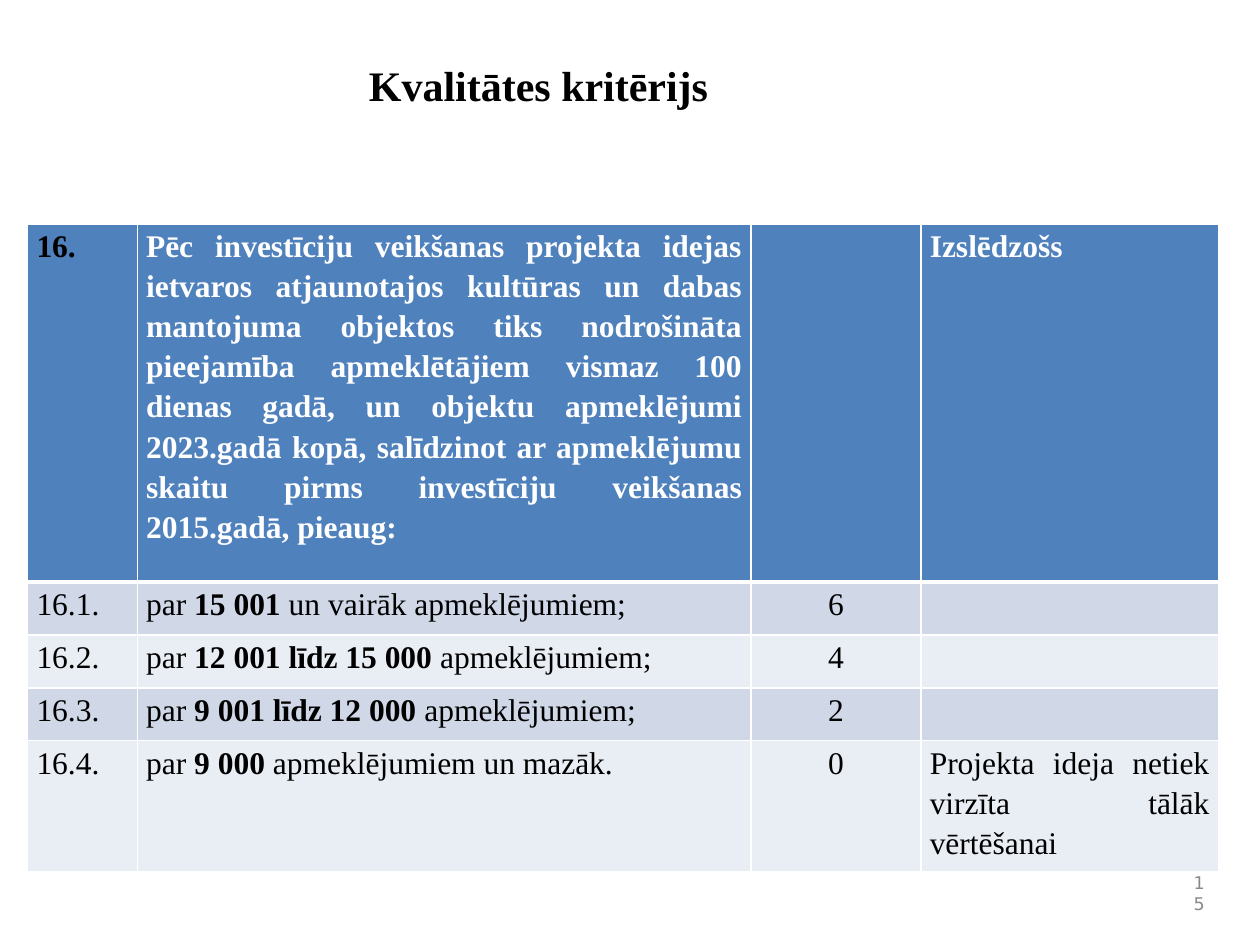
from lxml import etree
from pptx import Presentation
from pptx.dml.color import RGBColor
from pptx.enum.text import MSO_ANCHOR, PP_ALIGN as AL
from pptx.oxml.ns import qn
from pptx.util import Inches, Pt

SERIF, SANS = "Times New Roman", "DejaVu Sans"
BLACK, WHITE, GREY = "000000", "FFFFFF", "898989"
HEADER_FILL, BANDS = "4F81BD", ("D0D8E8", "E9EDF4")

TITLE = "Kvalitātes kritērijs"
PAGE = "15"
# Text between asterisks is bold.
ROWS = [
    ("*16.*",
     "*Pēc investīciju veikšanas projekta idejas ietvaros atjaunotajos kultūras "
     "un dabas mantojuma objektos tiks nodrošināta pieejamība apmeklētājiem "
     "vismaz 100 dienas gadā, un objektu apmeklējumi 2023.gadā kopā, salīdzinot "
     "ar apmeklējumu skaitu pirms investīciju veikšanas 2015.gadā, pieaug:*",
     "", "*Izslēdzošs*"),
    ("16.1.", "par *15 001 *un vairāk apmeklējumiem;", "6", ""),
    ("16.2.", "par *12 001 līdz 15 000 *apmeklējumiem;", "4", ""),
    ("16.3.", "par *9 001 līdz 12 000 *apmeklējumiem;", "2", ""),
    ("16.4.", "par *9 000 *apmeklējumiem un mazāk.", "0",
     "Projekta ideja netiek virzīta tālāk vērtēšanai"),
]
COL_WIDTHS = (0.87, 4.87, 1.35, 2.36)
ROW_HEIGHTS = (2.84, 0.42, 0.42, 0.42, 1.04)
BODY_ALIGN = (AL.JUSTIFY, AL.LEFT, AL.CENTER, AL.JUSTIFY)


def rgb(color):
    return RGBColor.from_string(color)


def style(font, size, name, color, bold=False):
    font.size, font.name, font.bold = Pt(size), name, bold
    font.color.rgb = rgb(color)


def add_text(slide, box, text, align, anchor, *font):
    tf = slide.shapes.add_textbox(*map(Inches, box)).text_frame
    tf.word_wrap = True
    tf.vertical_anchor = anchor
    tf.text = text
    p = tf.paragraphs[0]
    p.alignment = align
    style(p.runs[0].font, *font)


def set_borders(cell, widths):
    """Draw white borders; widths are points for left, right, top, bottom."""
    tc_pr = cell._tc.get_or_add_tcPr()
    for i, (side, width) in enumerate(zip("LRTB", widths)):
        ln = etree.Element(qn(f"a:ln{side}"), w=str(Pt(width)))
        fill = etree.SubElement(ln, qn("a:solidFill"))
        etree.SubElement(fill, qn("a:srgbClr"), val=WHITE)
        tc_pr.insert(i, ln)


def fill_cell(cell, text, row, col):
    header = row == 0
    cell.fill.solid()
    cell.fill.fore_color.rgb = rgb(HEADER_FILL if header else BANDS[(row - 1) % 2])
    set_borders(cell, (1, 1, 3 if row == 1 else 1, 3 if header else 1))
    if not text:
        return
    cell.margin_left = cell.margin_right = Inches(0.07)
    cell.margin_top = cell.margin_bottom = 0
    p = cell.text_frame.paragraphs[0]
    p.alignment = AL.JUSTIFY if header else BODY_ALIGN[col]
    p.line_spacing = 1.15
    color = WHITE if header and col else BLACK
    for i, part in enumerate(text.split("*")):
        if part:
            r = p.add_run()
            r.text = part
            style(r.font, 18, SERIF, color, i % 2 == 1)


def add_criteria_table(slide, left, top):
    size = (left, top, sum(COL_WIDTHS), sum(ROW_HEIGHTS))
    table = slide.shapes.add_table(
        len(ROWS), len(COL_WIDTHS), *map(Inches, size)).table
    for column, width in zip(table.columns, COL_WIDTHS):
        column.width = Inches(width)
    for row, height in zip(table.rows, ROW_HEIGHTS):
        row.height = Inches(height)
    for i, texts in enumerate(ROWS):
        for j, text in enumerate(texts):
            fill_cell(table.cell(i, j), text, i, j)


def main():
    prs = Presentation()
    prs.slide_width, prs.slide_height = Inches(10), Inches(7.5)
    slide = prs.slides.add_slide(prs.slide_layouts[6])
    add_text(slide, (2.83, 0.42, 6.67, 1.13), TITLE, AL.LEFT, MSO_ANCHOR.TOP,
             24, SERIF, BLACK, True)
    add_criteria_table(slide, 0.22, 1.78)
    add_text(slide, (9.33, 6.92, 0.33, 0.33), PAGE, AL.RIGHT, MSO_ANCHOR.MIDDLE,
             10, SANS, GREY)
    prs.save("out.pptx")


if __name__ == "__main__":
    main()
